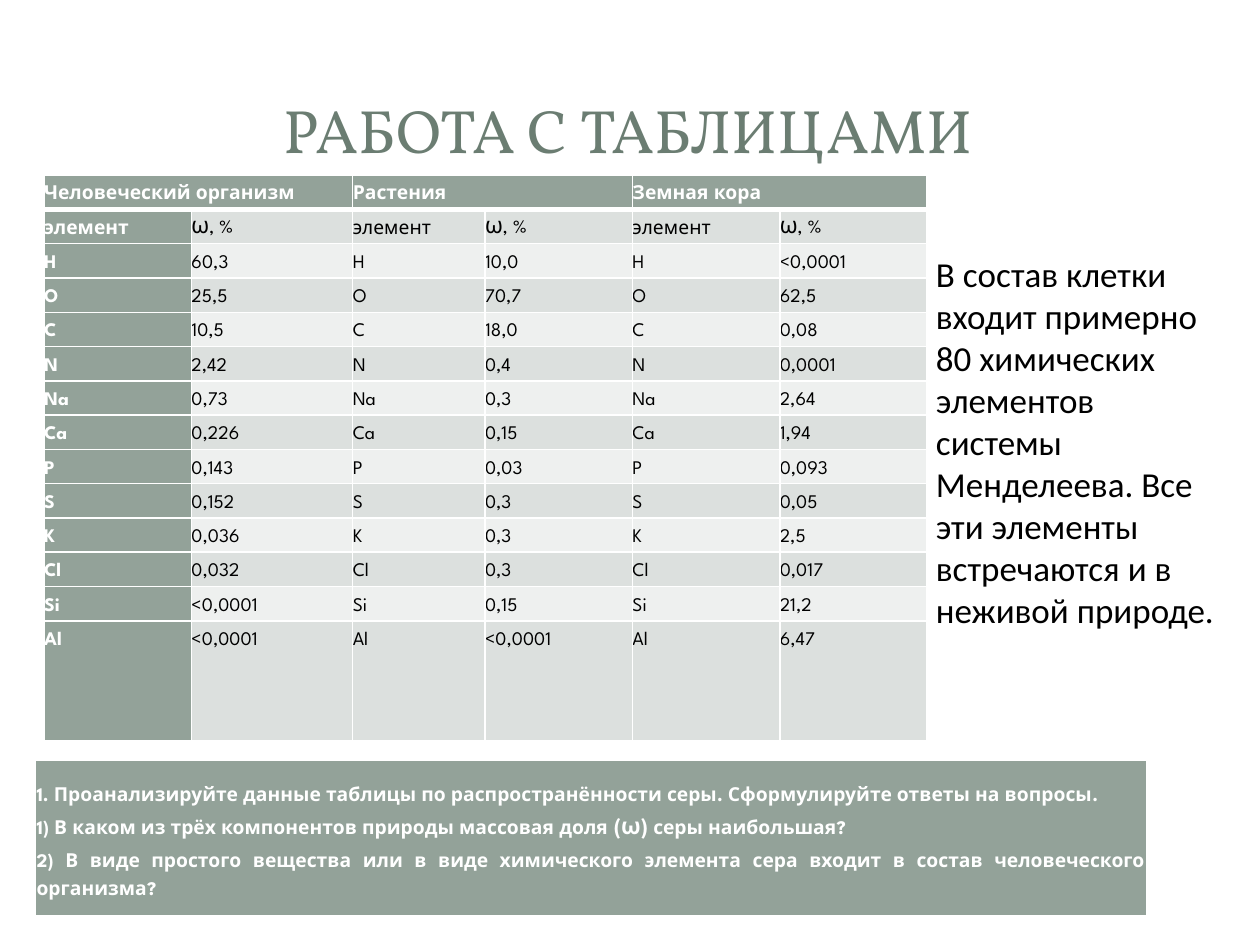
from dataclasses import dataclass

from lxml import etree
from pptx import Presentation
from pptx.dml.color import RGBColor
from pptx.enum.shapes import MSO_SHAPE
from pptx.enum.text import MSO_ANCHOR, MSO_AUTO_SIZE, PP_ALIGN
from pptx.oxml.ns import qn
from pptx.util import Inches, Pt

RECTANGLE, ROUNDED = MSO_SHAPE.RECTANGLE, MSO_SHAPE.ROUNDED_RECTANGLE
MIDDLE, TOP = MSO_ANCHOR.MIDDLE, MSO_ANCHOR.TOP
CENTER, LEFT, JUSTIFY = PP_ALIGN.CENTER, PP_ALIGN.LEFT, PP_ALIGN.JUSTIFY
FIT_SHAPE, NO_FIT = MSO_AUTO_SIZE.SHAPE_TO_FIT_TEXT, MSO_AUTO_SIZE.NONE
TITLE_ONLY = 5


@dataclass(frozen=True)
class Theme:
    """Colours, fonts and type sizes of the slide."""
    title_color: str = "6B7D72"
    accent: str = "93A299"
    dark_band: str = "DCE0DE"
    light_band: str = "EEF0EF"
    white: str = "FFFFFF"
    black: str = "000000"
    title_font: str = "Vollkorn"
    table_font: str = "League Spartan"
    body_font: str = "Calibri"
    title_size: float = 35
    body_size: float = 20
    table_size: float = 11
    omega_size: float = 13
    line_spacing: float = 16.5


THEME = Theme()
OMEGA_LABEL = ("ω", ", %")
GROUPS = ["Человеческий организм", "Растения", "Земная кора"]
CONTENTS = [
    ("H", "60,3", "10,0", "<0,0001"),
    ("O", "25,5", "70,7", "62,5"),
    ("C", "10,5", "18,0", "0,08"),
    ("N", "2,42", "0,4", "0,0001"),
    ("Na", "0,73", "0,3", "2,64"),
    ("Ca", "0,226", "0,15", "1,94"),
    ("P", "0,143", "0,03", "0,093"),
    ("S", "0,152", "0,3", "0,05"),
    ("K", "0,036", "0,3", "2,5"),
    ("Cl", "0,032", "0,3", "0,017"),
    ("Si", "<0,0001", "0,15", "21,2"),
    ("Al", "<0,0001", "<0,0001", "6,47"),
]
COLUMN_WIDTHS = [1.17, 1.28, 1.05, 1.17, 1.17, 1.17]
TABLE_HEIGHT, LAST_ROW_HEIGHT = 4.49, 0.95
QUESTIONS = [
    ("1. Проанализируйте данные таблицы по распространённости серы. "
     "Сформулируйте ответы на вопросы.",),
    ("1) В каком из трёх компонентов природы массовая доля ", "(ω)",
     " серы наибольшая?"),
    ("2) В виде простого вещества или в виде химического элемента сера "
     "входит в состав человеческого организма?",),
]
SUMMARY = ("В состав клетки входит примерно 80 химических элементов системы "
           "Менделеева. Все эти элементы встречаются и в неживой природе.")


def format_run(run, font, size, color, bold=False):
    """Set the typeface, size, colour and weight of a run."""
    run.font.name = font
    run.font.size = Pt(size)
    run.font.color.rgb = RGBColor.from_string(color)
    run.font.bold = bold


def place(shape, left, top, width, height):
    """Move and size a shape, in inches."""
    shape.left, shape.top = Inches(left), Inches(top)
    shape.width, shape.height = Inches(width), Inches(height)


def add_panel(slide, kind, left, top, width, height):
    """Add a white panel without outline or shadow."""
    panel = slide.shapes.add_shape(kind, Inches(left), Inches(top),
                                   Inches(width), Inches(height))
    panel.shadow.inherit = False
    panel.fill.solid()
    panel.fill.fore_color.rgb = RGBColor.from_string(THEME.white)
    panel.line.fill.background()
    return panel


def add_background(slide):
    """Add the page panel and the two title panels."""
    page = add_panel(slide, ROUNDED, 0.1, 0.11, 9.8, 7.29)
    page.adjustments[0] = 0.02
    frame = add_panel(slide, RECTANGLE, 0.3, 0.3, 9.4, 1.45)
    color = frame.fill._xPr.find(f"{qn('a:solidFill')}/{qn('a:srgbClr')}")
    etree.SubElement(color, qn("a:alpha"), val="83000")
    add_panel(slide, RECTANGLE, 0.41, 0.41, 9.17, 1.22)


def set_borders(cell, bottom_width):
    """Draw white cell borders, with their own width at the bottom."""
    properties = cell._tc.get_or_add_tcPr()
    for side, width in zip("LRTB", (1, 1, 1, bottom_width)):
        line = etree.SubElement(properties, qn(f"a:ln{side}"), w=str(Pt(width)))
        fill = etree.SubElement(line, qn("a:solidFill"))
        etree.SubElement(fill, qn("a:srgbClr"), val=THEME.white)


def write_cell(cell, paragraphs, fill, color, bold, bottom_width=1,
               margin=0, alignment=LEFT, anchor=TOP):
    """Fill a cell with paragraphs, each given as a sequence of run texts."""
    cell.margin_left = cell.margin_right = Inches(margin)
    cell.margin_top = cell.margin_bottom = Inches(margin)
    cell.vertical_anchor = anchor
    set_borders(cell, bottom_width)
    cell.fill.solid()
    cell.fill.fore_color.rgb = RGBColor.from_string(fill)
    for index, texts in enumerate(paragraphs):
        frame = cell.text_frame
        paragraph = frame.add_paragraph() if index else frame.paragraphs[0]
        paragraph.alignment = alignment
        paragraph.line_spacing = Pt(THEME.line_spacing)
        single = len(texts) == 1
        paragraph.space_before = Pt(1.5 if single else 0)
        paragraph.space_after = Pt(3 if single else 0)
        for text in texts:
            run = paragraph.add_run()
            run.text = text
            size = THEME.omega_size if "ω" in text else THEME.table_size
            format_run(run, THEME.table_font, size, color, bold)


def add_grid(slide, left, top, widths, heights):
    """Add a table with the given column widths and row heights."""
    table = slide.shapes.add_table(
        len(heights), len(widths), Inches(left), Inches(top),
        Inches(sum(widths)), Inches(sum(heights))).table
    for column, width in zip(table.columns, widths):
        column.width = Inches(width)
    for row, height in zip(table.rows, heights):
        row.height = Inches(height)
    return table


def add_title(slide, text):
    """Fill the title placeholder and bring it in front of the panels."""
    title = slide.shapes.title
    slide.shapes._spTree.append(title._element)
    place(title, 0.47, 0.45, 9.03, 1.14)
    frame = title.text_frame
    frame.text = text
    frame.auto_size = NO_FIT
    frame.vertical_anchor = MIDDLE
    paragraph = frame.paragraphs[0]
    paragraph.alignment = CENTER
    format_run(paragraph.runs[0], THEME.title_font, THEME.title_size,
               THEME.title_color)


def add_element_table(slide):
    """Add the table of element mass fractions."""
    row_count = len(CONTENTS) + 1
    row_height = (TABLE_HEIGHT - LAST_ROW_HEIGHT) / row_count
    heights = [row_height] * row_count + [LAST_ROW_HEIGHT]
    table = add_grid(slide, 0.35, 1.39, COLUMN_WIDTHS, heights)
    for index, group in enumerate(GROUPS):
        first, second = table.cell(0, 2 * index), table.cell(0, 2 * index + 1)
        first.merge(second)
        write_cell(first, [(group,)], THEME.accent, THEME.white, True, 3)
        set_borders(second, 3)
    rows = [[("элемент",), OMEGA_LABEL] * len(GROUPS)]
    for element, *values in CONTENTS:
        rows.append([(text,) for value in values for text in (element, value)])
    for row_index, row in enumerate(rows, start=1):
        band = THEME.dark_band if row_index % 2 else THEME.light_band
        for column_index, texts in enumerate(row):
            heading = column_index == 0
            write_cell(table.cell(row_index, column_index), [texts],
                       THEME.accent if heading else band,
                       THEME.white if heading else THEME.black, heading)


def add_question_table(slide):
    """Add the one-cell table with the questions."""
    table = add_grid(slide, 0.28, 6.03, [8.82], [1.25])
    write_cell(table.cell(0, 0), QUESTIONS, THEME.accent, THEME.white, True,
               3, 0.01, JUSTIFY, MIDDLE)


def add_summary(slide):
    """Add the text beside the element table."""
    box = slide.shapes.add_textbox(Inches(7.33), Inches(1.94),
                                   Inches(2.48), Inches(3.13))
    frame = box.text_frame
    frame.word_wrap = True
    frame.auto_size = FIT_SHAPE
    frame.vertical_anchor = MIDDLE
    frame.text = SUMMARY
    format_run(frame.paragraphs[0].runs[0], THEME.body_font, THEME.body_size,
               THEME.black)


def main():
    """Build and save the slide."""
    presentation = Presentation()
    presentation.slide_width, presentation.slide_height = Inches(10), Inches(7.5)
    slide = presentation.slides.add_slide(presentation.slide_layouts[TITLE_ONLY])
    for add_part in (add_background, add_element_table, add_question_table,
                     add_summary):
        add_part(slide)
    add_title(slide, "РАБОТА С ТАБЛИЦАМИ")
    presentation.save("out.pptx")


if __name__ == "__main__":
    main()
